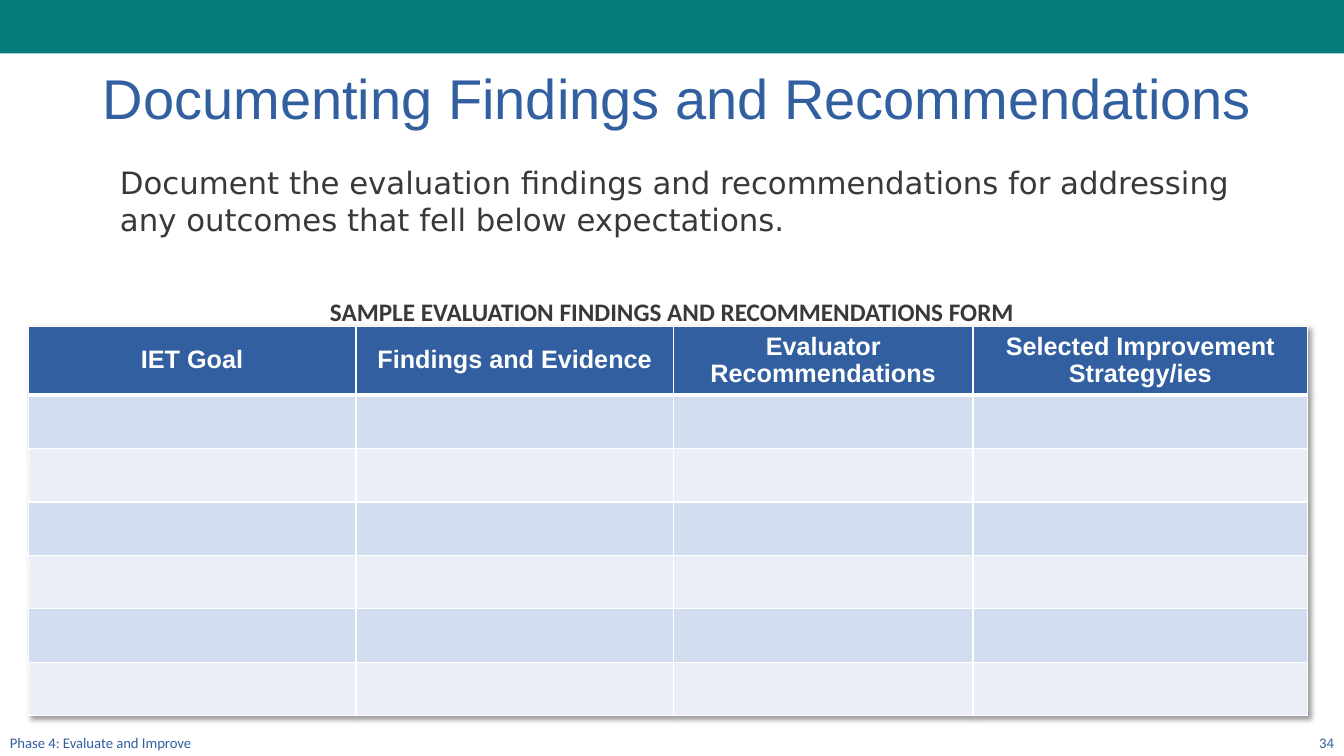
from lxml.etree import SubElement
from pptx import Presentation
from pptx.dml.color import RGBColor
from pptx.enum.shapes import MSO_SHAPE
from pptx.enum.text import MSO_ANCHOR, MSO_AUTO_SIZE, PP_ALIGN
from pptx.oxml import parse_xml
from pptx.oxml.ns import nsdecls, qn
from pptx.util import Inches, Pt

TEAL, BLUE, GRAY, WHITE = "047C7C", "315F9F", "3B3838", "FFFFFF"
BANDS = ["D2DEEF", "EAEFF7"]
HEADS = ["IET Goal", "Findings and Evidence", "Evaluator Recommendations",
         "Selected Improvement Strategy/ies"]
WIDTHS = [3.25, 3.15, 2.97, 3.32]
HEAD_HIGH, ROW_HIGH, ROWS = 0.68, 0.53, 6


def color(code):
    return RGBColor.from_string(code)


def paint(shape, code):
    shape.fill.solid()
    shape.fill.fore_color.rgb = color(code)


def write(frame, text, size, font, code, bold=False, align=PP_ALIGN.LEFT, gap=0):
    frame.text = text
    para = frame.paragraphs[0]
    para.alignment = align
    para.space_before = para.space_after = Pt(gap)
    para.font.size, para.font.name, para.font.bold = Pt(size), font, bold
    para.font.color.rgb = color(code)
    return para


def place(shape, box):
    shape.left, shape.top, shape.width, shape.height = map(Inches, box)
    frame = shape.text_frame
    frame.word_wrap = True
    frame.auto_size = MSO_AUTO_SIZE.NONE
    return frame


def label(slide, box, text, anchor=MSO_ANCHOR.TOP, **style):
    frame = place(slide.shapes.add_textbox(0, 0, 0, 0), box)
    frame.vertical_anchor = anchor
    write(frame, text, **style)


def band(slide, box):
    bar = slide.shapes.add_shape(MSO_SHAPE.RECTANGLE, *map(Inches, box))
    paint(bar, TEAL)
    bar.line.fill.background()
    bar.shadow.inherit = False


def title(slide, box):
    frame = place(slide.shapes.title, box)
    frame.vertical_anchor = MSO_ANCHOR.MIDDLE
    para = write(frame, "Documenting Findings and Recommendations", 40, "Arial", BLUE)
    para.line_spacing = 0.9


def body(slide, box):
    frame = place(slide.placeholders[1], box)
    para = write(frame, "Document the evaluation findings and recommendations for "
                 "addressing any outcomes that fell below expectations.",
                 22, "DejaVu Sans", GRAY, gap=6)
    # No bullet, no hanging indent
    props = para._p.get_or_add_pPr()
    props.set("marL", "0")
    props.set("indent", "0")
    SubElement(props, qn("a:buNone"))


def border(cell, **widths):
    props = cell._tc.get_or_add_tcPr()
    for spot, (side, width) in enumerate(widths.items()):
        props.insert(spot, parse_xml(
            f'<a:ln{side} {nsdecls("a")} w="{Pt(width)}"><a:solidFill>'
            f'<a:srgbClr val="{WHITE}"/></a:solidFill></a:ln{side}>'))


def form(slide, box):
    left, top = box
    high = HEAD_HIGH + ROWS * ROW_HIGH
    grid = slide.shapes.add_table(ROWS + 1, len(HEADS), Inches(left), Inches(top),
                                  Inches(sum(WIDTHS)), Inches(high)).table
    for col, width in zip(grid.columns, WIDTHS):
        col.width = Inches(width)
    for r, row in enumerate(grid.rows):
        row.height = Inches(ROW_HIGH if r else HEAD_HIGH)
        for c, cell in enumerate(row.cells):
            paint(cell, BANDS[(r - 1) % 2] if r else BLUE)
            border(cell, L=1, R=1, T=3 if r == 1 else 1, B=1 if r else 3)
            if r == 0:
                head(cell, HEADS[c])
    # Soft shadow behind the form
    grid._tbl.tblPr.insert(0, parse_xml(
        f'<a:effectLst {nsdecls("a")}><a:outerShdw blurRad="50800" dist="38100" '
        'dir="2700000" algn="tl" rotWithShape="0"><a:srgbClr val="000000">'
        '<a:alpha val="40000"/></a:srgbClr></a:outerShdw></a:effectLst>'))


def head(cell, text):
    cell.vertical_anchor = MSO_ANCHOR.MIDDLE
    cell.margin_left = cell.margin_right = Inches(0.07)
    cell.margin_top = cell.margin_bottom = 0
    para = write(cell.text_frame, text, 18, "Arial", WHITE, True, PP_ALIGN.CENTER, 2)
    para.line_spacing = Pt(19)


def footer(slide, box):
    left, top, width, high = box
    style = dict(anchor=MSO_ANCHOR.BOTTOM, size=10.5, font="Calibri", code=BLUE)
    label(slide, (left, top, 4.5, high), "Phase 4: Evaluate and Improve", **style)
    label(slide, (left + width - 3, top, 3, high), "34", align=PP_ALIGN.RIGHT, **style)


def main():
    deck = Presentation()
    deck.slide_width, deck.slide_height = Inches(13.33), Inches(7.5)
    slide = deck.slides.add_slide(deck.slide_layouts[1])
    band(slide, (0, 0, 13.33, 0.53))
    title(slide, (0.92, 0.66, 11.76, 0.7))
    body(slide, (1.09, 1.57, 11.33, 1.22))
    footer(slide, (0, 7.19, 13.33, 0.31))
    form(slide, (0.28, 3.24))
    label(slide, (1, 2.89, 11.33, 0.35),
          "SAMPLE EVALUATION FINDINGS AND RECOMMENDATIONS FORM", size=18,
          font="Calibri", code=GRAY, bold=True, align=PP_ALIGN.CENTER, gap=6)
    deck.save("out.pptx")


if __name__ == "__main__":
    main()
